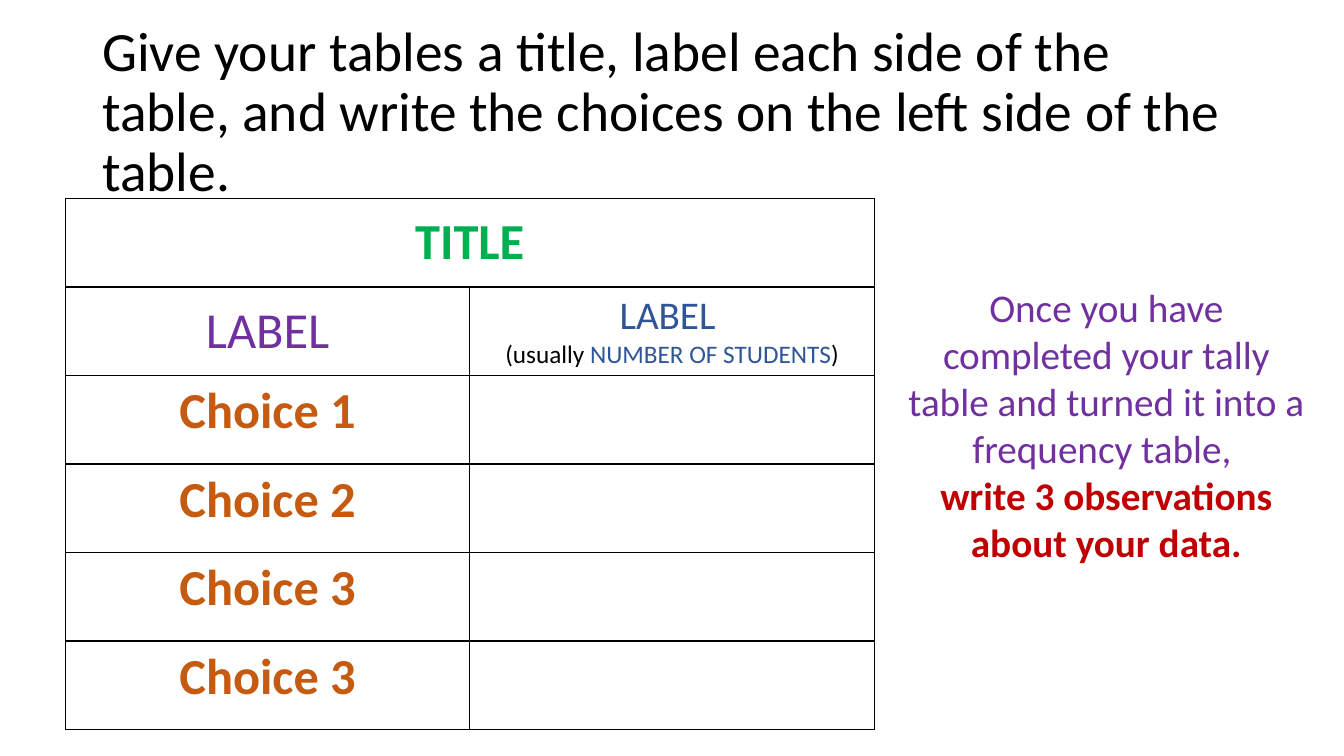
from lxml import etree
from pptx import Presentation
from pptx.dml.color import RGBColor
from pptx.enum.text import MSO_ANCHOR, PP_ALIGN
from pptx.oxml.ns import qn
from pptx.util import Cm, Pt

MID, TOP = MSO_ANCHOR.MIDDLE, MSO_ANCHOR.TOP
MID_ALIGN = PP_ALIGN.CENTER
BLACK, BLUE, PURPLE = "000000", "2F5597", "7030A0"
GREEN, ORANGE, RED = "00B050", "C55A11", "C00000"


def add_run(para, text, size, color, bold=False):
    run = para.add_run()
    run.text = text
    font = run.font
    font.name, font.size, font.bold = "Calibri", Pt(size), bold
    font.color.rgb = RGBColor.from_string(color)


def add_edges(cell):
    props = cell._tc.get_or_add_tcPr()
    for at, side in enumerate(("a:lnL", "a:lnR", "a:lnT", "a:lnB")):
        line = etree.Element(qn(side), w=str(Pt(1)))
        fill = etree.SubElement(line, qn("a:solidFill"))
        etree.SubElement(fill, qn("a:srgbClr"), val=BLACK)
        props.insert(at, line)


deck = Presentation()
deck.slide_width, deck.slide_height = Cm(33.87), Cm(19.05)
slide = deck.slides.add_slide(deck.slide_layouts[6])

# Heading
head = slide.shapes.add_textbox(Cm(2.33), Cm(1.02), Cm(29.21), Cm(3.68)).text_frame
head.word_wrap = True
head.vertical_anchor = MID
para = head.paragraphs[0]
para.line_spacing = 0.9
add_run(para, "Give your tables a title, label each side of the table, "
        "and write the choices on the left side of the table.", 39.6, BLACK)

# Table grid
ROWS, COLS = 6, 2
WIDE, HIGH = 10.19, 2.23
table = slide.shapes.add_table(ROWS, COLS, Cm(1.65), Cm(5), Cm(COLS * WIDE), Cm(ROWS * HIGH)).table
table.first_row = table.horz_banding = False
for col in table.columns:
    col.width = Cm(WIDE)
for row in table.rows:
    row.height = Cm(HIGH)
for cell in table.iter_cells():
    cell.fill.background()
    add_edges(cell)
table.cell(0, 0).merge(table.cell(0, 1))

# Title, label and choices
first = [("TITLE", GREEN, True, MID), ("LABEL", PURPLE, False, MID)]
first += [(f"Choice {num}", ORANGE, True, TOP) for num in (1, 2, 3, 3)]
for row, (text, color, bold, anchor) in enumerate(first):
    cell = table.cell(row, 0)
    cell.vertical_anchor = anchor
    para = cell.text_frame.paragraphs[0]
    para.alignment = MID_ALIGN
    add_run(para, text, 36, color, bold)

# Label of the right column
cell = table.cell(1, 1)
cell.vertical_anchor = MID
para = cell.text_frame.paragraphs[0]
para.alignment = MID_ALIGN
add_run(para, "LABEL ", 28, BLUE)
para.add_line_break()
for text, color in (("(usually ", BLACK), ("NUMBER OF STUDENTS", BLUE), (")", BLACK)):
    add_run(para, text, 18, color)

# Side note
note = slide.shapes.add_textbox(Cm(22.56), Cm(7.01), Cm(10.64), Cm(7.44)).text_frame
note.word_wrap = True
lines = [
    ("Once you have completed your tally table and turned it into a frequency table, ", PURPLE, False),
    ("write 3 observations about your data.", RED, True),
]
for num, (text, color, bold) in enumerate(lines):
    para = note.add_paragraph() if num else note.paragraphs[0]
    para.alignment = MID_ALIGN
    add_run(para, text, 28, color, bold)

deck.save("out.pptx")
